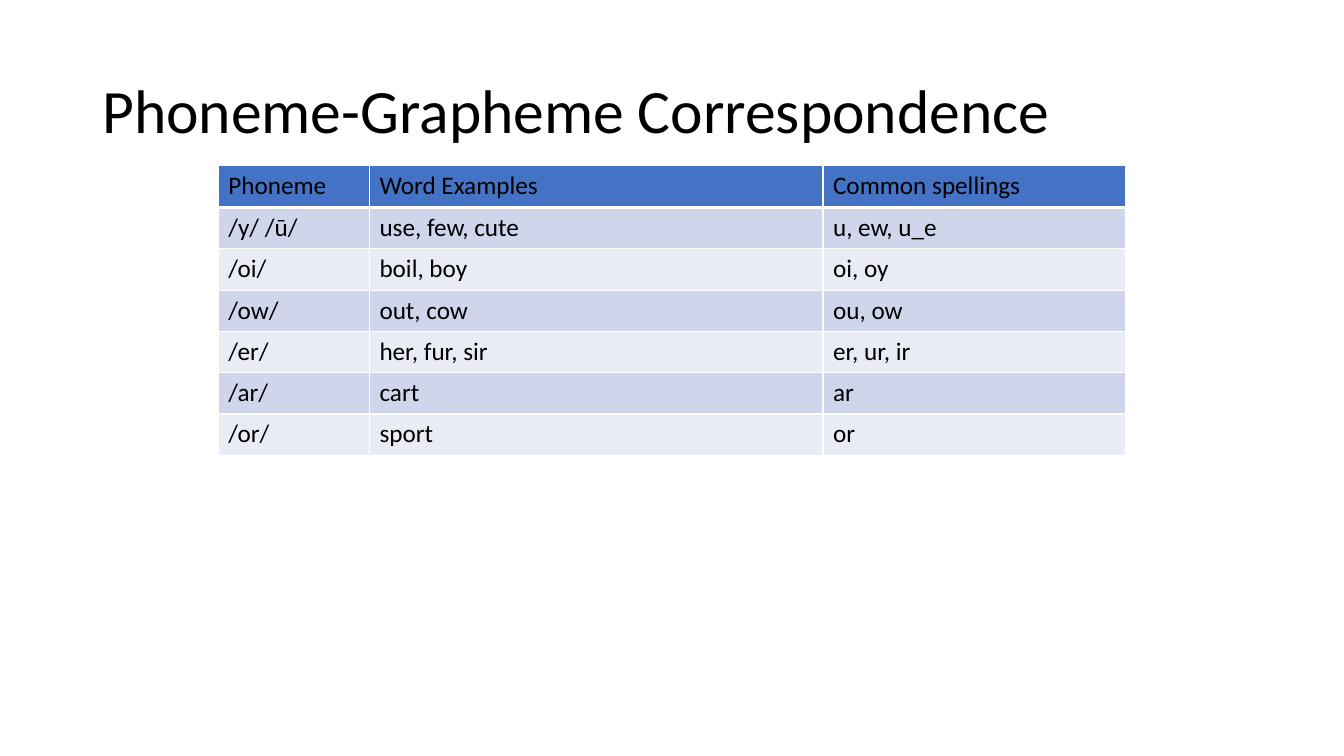
from lxml import etree
from pptx import Presentation
from pptx import util as u
from pptx.dml.color import RGBColor
from pptx.enum import text
from pptx.oxml import ns

FONT = "Calibri"
WHITE, BLACK, BLUE = "FFFFFF", "000000", "4472C4"
BANDS = ["CFD5EA", "E9EBF5"]
COLUMN_WIDTHS = [3.81, 11.43, 7.62]
HEADER_HEIGHT, ROW_HEIGHT = 1.06, 1.04
TITLE = "Phoneme-Grapheme Correspondence"
ROWS = [
    ("Phoneme", "Word Examples", "Common spellings"),
    ("/y/ /ū/", "use, few, cute", "u, ew, u_e"),
    ("/oi/", "boil, boy", "oi, oy"),
    ("/ow/", "out, cow", "ou, ow"),
    ("/er/", "her, fur, sir", "er, ur, ir"),
    ("/ar/", "cart", "ar"),
    ("/or/", "sport", "or"),
]


def color(value):
    return RGBColor.from_string(value)


def write(frame, content, size=18, ink=BLACK, bold=False, spacing=1.0):
    para = frame.paragraphs[0]
    para.alignment = text.PP_ALIGN.LEFT
    para.line_spacing = spacing
    span = para.add_run()
    span.text = content
    span.font.name = FONT
    span.font.size = u.Pt(size)
    span.font.bold = bold
    span.font.color.rgb = color(ink)


def border(cell, bottom=1):
    properties = cell._tc.get_or_add_tcPr()
    for side, width in (("L", 1), ("R", 1), ("T", 1), ("B", bottom)):
        line = etree.SubElement(properties, ns.qn(f"a:ln{side}"), w=str(u.Pt(width)))
        fill = etree.SubElement(line, ns.qn("a:solidFill"))
        etree.SubElement(fill, ns.qn("a:srgbClr"), val=WHITE)


def add_title(page, left, top, width, height):
    box = page.shapes.add_textbox(u.Cm(left), u.Cm(top), u.Cm(width), u.Cm(height))
    frame = box.text_frame
    frame.word_wrap = True
    frame.vertical_anchor = text.MSO_ANCHOR.MIDDLE
    write(frame, TITLE, size=44, spacing=0.9)


def add_phoneme_table(page, left, top):
    height = HEADER_HEIGHT + ROW_HEIGHT * (len(ROWS) - 1)
    table = page.shapes.add_table(
        len(ROWS), len(COLUMN_WIDTHS), u.Cm(left), u.Cm(top),
        u.Cm(sum(COLUMN_WIDTHS)), u.Cm(height)).table
    for column, width in zip(table.columns, COLUMN_WIDTHS):
        column.width = u.Cm(width)
    for index, words in enumerate(ROWS):
        header = index == 0
        table.rows[index].height = u.Cm(HEADER_HEIGHT if header else ROW_HEIGHT)
        for cell, word in zip(table.rows[index].cells, words):
            border(cell, bottom=3 if header else 1)
            cell.fill.solid()
            cell.fill.fore_color.rgb = color(BLUE if header else BANDS[(index - 1) % 2])
            write(cell.text_frame, word)


def main():
    deck = Presentation()
    deck.slide_width, deck.slide_height = u.Cm(33.87), u.Cm(19.05)
    page = deck.slides.add_slide(deck.slide_layouts[6])
    add_title(page, 2.33, 1.01, 29.21, 3.68)
    add_phoneme_table(page, 5.5, 4.17)
    deck.save("out.pptx")


if __name__ == "__main__":
    main()
